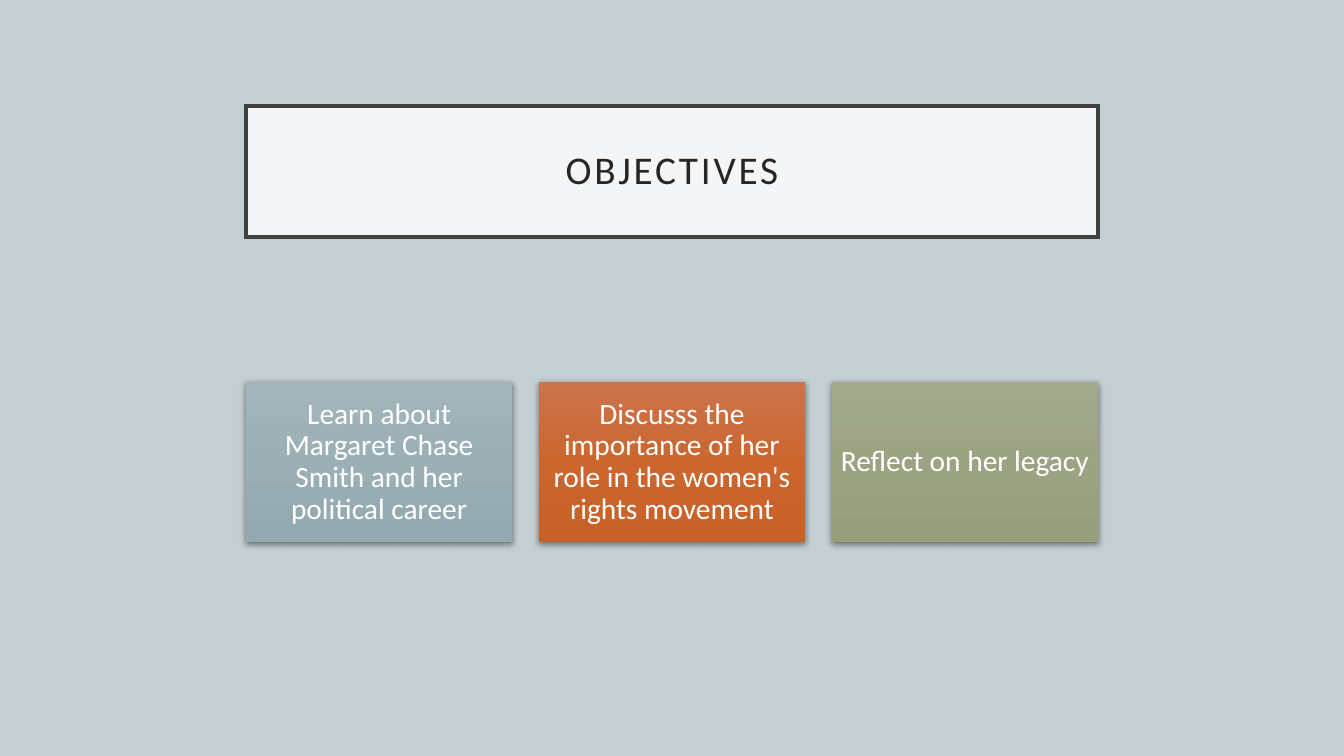
from lxml import etree
from pptx import Presentation
from pptx.dml.color import RGBColor
from pptx.enum import shapes, text
from pptx.oxml.ns import qn
from pptx.util import Inches, Pt

TITLE = "OBJECTIVES"
# Text of each card, then its gradient from top to bottom
CARDS = [
    ("Learn about Margaret Chase Smith and her political career",
     ("A3B5BB", "9BAFB5", "93A9AF")),
    ("Discusss the importance of her role in the women's rights movement",
     ("CC734B", "CB662F", "C86128")),
    ("Reflect on her legacy",
     ("A3A98C", "9CA383", "979E7C")),
]

BACKGROUND = RGBColor(0xC3, 0xCF, 0xD3)
WHITE = RGBColor(0xFF, 0xFF, 0xFF)
FRAME = RGBColor(0x40, 0x40, 0x40)
INK = RGBColor(0x26, 0x26, 0x26)
FONT = "Calibri"

LEFT, WIDTH = 2.44, 8.45
TITLE_TOP, TITLE_HEIGHT = 1.05, 1.3
CARD_TOP, CARD_WIDTH, CARD_HEIGHT = 3.79, 2.64, 1.59
CARD_STEP = (WIDTH - CARD_WIDTH) / (len(CARDS) - 1)


def add(parent, tag, **attrs):
    return etree.SubElement(parent, qn(tag), {k: str(v) for k, v in attrs.items()})


def write(sp, words, size, color, inset, spacing=0):
    tf = sp.text_frame
    tf.word_wrap = True
    tf.auto_size = text.MSO_AUTO_SIZE.NONE
    tf.vertical_anchor = text.MSO_ANCHOR.MIDDLE
    tf.margin_left = tf.margin_right = Inches(inset)
    tf.margin_top = tf.margin_bottom = Inches(inset)
    p = tf.paragraphs[0]
    p.alignment = text.PP_ALIGN.CENTER
    p.line_spacing = 0.9
    r = p.add_run()
    r.text = words
    r.font.name, r.font.size, r.font.color.rgb = FONT, Pt(size), color
    if spacing:
        r.font._element.set("spc", str(spacing * 100))


def shade(sp, colors):
    """Fill with evenly spaced colours running downwards."""
    sp.fill.gradient()
    sp.fill.gradient_angle = 270
    stops = sp._element.spPr.find(".//" + qn("a:gsLst"))
    stops.clear()
    for i, color in enumerate(colors):
        stop = add(stops, "a:gs", pos=100000 * i // (len(colors) - 1))
        add(stop, "a:srgbClr", val=color)


def drop_shadow(sp):
    sp.shadow.inherit = False
    effects = sp._element.spPr.find(qn("a:effectLst"))
    shadow = add(effects, "a:outerShdw", blurRad=Pt(4.4), dist=Pt(1.2),
                 dir=5400000, algn="ctr", rotWithShape=0)
    add(add(shadow, "a:srgbClr", val="000000"), "a:alpha", val=45000)


def add_title(slide):
    title = slide.shapes.title
    title.left, title.top = Inches(LEFT), Inches(TITLE_TOP)
    title.width, title.height = Inches(WIDTH), Inches(TITLE_HEIGHT)
    title.fill.solid()
    title.fill.fore_color.rgb = WHITE
    white = title._element.spPr.find(qn("a:solidFill") + "/" + qn("a:srgbClr"))
    add(white, "a:alpha", val=80000)
    title.line.color.rgb = FRAME
    title.line.width = Pt(2.5)
    add(title._element.spPr.find(qn("a:ln")), "a:miter", lim=800000)
    write(title, TITLE, 28, INK, 0.2, spacing=2)


def add_card(slide, index, words, colors):
    sp = slide.shapes.add_shape(
        shapes.MSO_SHAPE.RECTANGLE, Inches(LEFT + index * CARD_STEP),
        Inches(CARD_TOP), Inches(CARD_WIDTH), Inches(CARD_HEIGHT))
    shade(sp, colors)
    sp.line.fill.background()
    drop_shadow(sp)
    write(sp, words, 21, WHITE, 0.09)


def main():
    prs = Presentation()
    prs.slide_width, prs.slide_height = Inches(13.33), Inches(7.5)
    slide = prs.slides.add_slide(prs.slide_layouts[5])
    slide.background.fill.solid()
    slide.background.fill.fore_color.rgb = BACKGROUND
    add_title(slide)
    for index, (words, colors) in enumerate(CARDS):
        add_card(slide, index, words, colors)
    prs.save("out.pptx")


if __name__ == "__main__":
    main()
